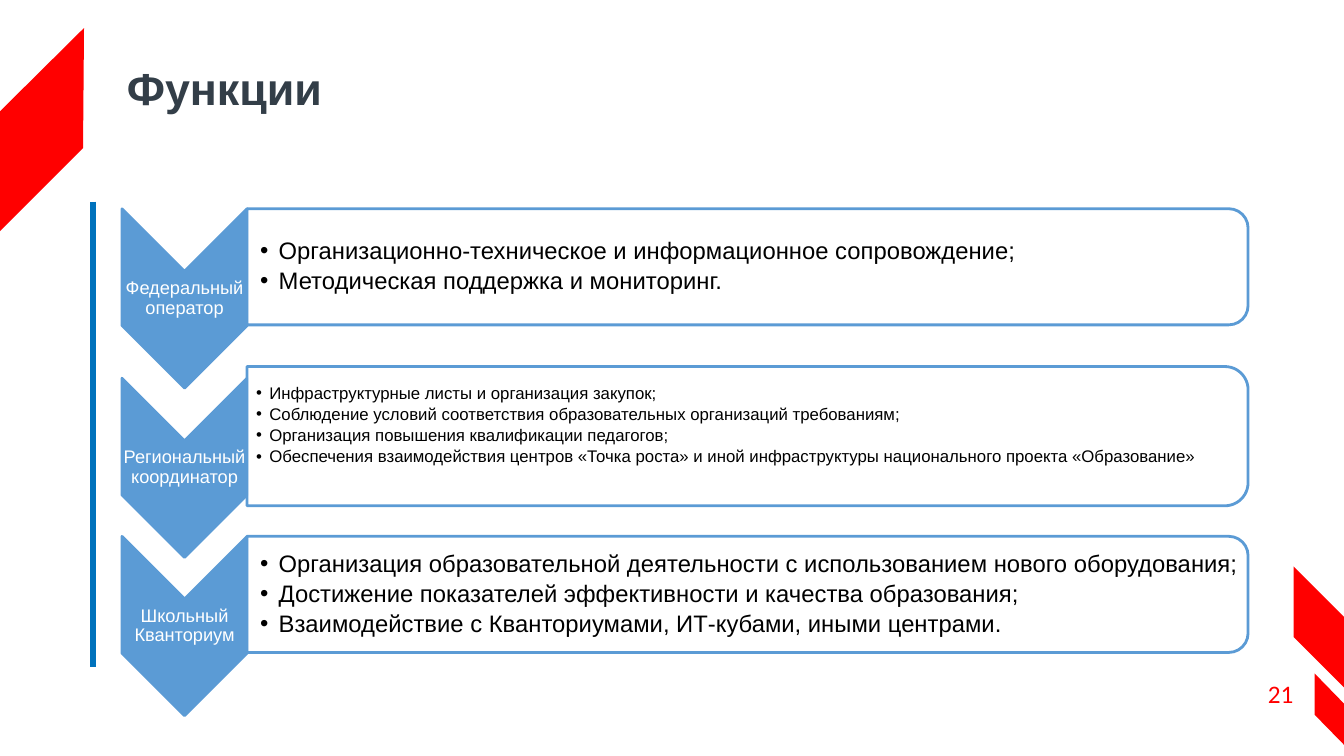
"""Builds the slide on the functions of the operator, coordinator and school."""
from dataclasses import dataclass

from lxml.etree import SubElement
from pptx import Presentation
from pptx.dml.color import RGBColor as Color
from pptx.enum.shapes import MSO_CONNECTOR as Connector, MSO_SHAPE as Shape
from pptx.enum.text import MSO_ANCHOR as Anchor, PP_ALIGN as Align
from pptx.oxml.ns import qn
from pptx.util import Pt


@dataclass(frozen=True)
class Theme:
    red: Color = Color(0xFF, 0x00, 0x00)
    ink: Color = Color(0x33, 0x3E, 0x48)
    bar: Color = Color(0x00, 0x72, 0xBC)
    blue: Color = Color(0x5B, 0x9B, 0xD5)
    white: Color = Color(0xFF, 0xFF, 0xFF)
    black: Color = Color(0x00, 0x00, 0x00)
    title: int = 32
    number: int = 18
    label: int = 13
    large: int = 17
    small: int = 12


theme = Theme()
deck = Presentation()
deck.slide_width, deck.slide_height = Pt(960), Pt(540)
page = deck.slides.add_slide(deck.slide_layouts[6])


def write(text, left, top, width, height, size, color, font="Arial", bold=False,
          align=Align.LEFT, anchor=Anchor.MIDDLE, insets=(3.6, 3.6, 3.6, 3.6),
          spacing=0.9, after=0, indent=0):
    box = page.shapes.add_textbox(Pt(left), Pt(top), Pt(width), Pt(height))
    frame = box.text_frame
    frame.word_wrap = True
    frame.vertical_anchor = anchor
    frame.margin_left, frame.margin_top, frame.margin_right, frame.margin_bottom = map(Pt, insets)
    for index, line in enumerate(text.split("\n")):
        para = frame.paragraphs[0] if index == 0 else frame.add_paragraph()
        if indent:
            props = para._p.get_or_add_pPr()
            props.set("marL", str(Pt(indent)))
            props.set("indent", str(-Pt(indent)))
            SubElement(props, qn("a:buFont")).set("typeface", "Arial")
            SubElement(props, qn("a:buChar")).set("char", "•")
        para.alignment = align
        para.line_spacing = spacing
        para.space_after = Pt(after)
        span = para.add_run()
        span.text = line
        span.font.name, span.font.size, span.font.bold = font, Pt(size), bold
        span.font.color.rgb = color


def add_turned(kind, center_x, center_y, width, height, fill):
    shape = page.shapes.add_shape(kind, Pt(center_x - width / 2), Pt(center_y - height / 2),
                                  Pt(width), Pt(height))
    shape.rotation = 90
    shape.shadow.inherit = False
    shape.fill.solid()
    shape.fill.fore_color.rgb = fill
    shape.line.color.rgb = theme.blue
    shape.line.width = Pt(2)
    return shape


write("21", 891.4, 481, 36, 28.8, theme.number, theme.red, font="Calibri",
      align=Align.RIGHT, anchor=Anchor.TOP, spacing=1)

ribbons = [
    [(0, 165), (0, 79.5), (60, 20), (59.3, 105.8)],
    [(960, 491), (924, 455), (924, 404.6), (960, 440.6)],
    [(960, 532), (939, 510.5), (939, 481), (960, 502.6)],
]
for corners in ribbons:
    start, *others = corners
    builder = page.shapes.build_freeform(Pt(start[0]), Pt(start[1]))
    builder.add_line_segments([(Pt(x), Pt(y)) for x, y in others], close=True)
    ribbon = builder.convert_to_shape()
    ribbon.shadow.inherit = False
    ribbon.fill.solid()
    ribbon.fill.fore_color.rgb = theme.red
    ribbon.line.fill.background()

write("Функции", 87, 28.8, 634, 72, theme.title, theme.ink, bold=True)

bar = page.shapes.add_connector(Connector.STRAIGHT, Pt(66.2), Pt(144), Pt(66.2), Pt(476.6))
bar.line.color.rgb = theme.bar
bar.line.width = Pt(4.5)
SubElement(bar._element.spPr, qn("a:effectLst"))

rows = [
    ("Федеральный оператор", 190.6, 83, theme.large, 0.72,
     "Организационно-техническое и информационное сопровождение;\n"
     "Методическая поддержка и мониторинг."),
    ("Региональный координатор", 311.6, 99.5, theme.small, 16,
     "Инфраструктурные листы и организация закупок;\n"
     "Соблюдение условий соответствия образовательных организаций требованиям;\n"
     "Организация повышения квалификации педагогов;\n"
     "Обеспечения взаимодействия центров «Точка роста» и иной инфраструктуры "
     "национального проекта «Образование»"),
    ("Школьный Кванториум", 424.6, 83, theme.large, 0.72,
     "Организация образовательной деятельности с использованием нового оборудования;\n"
     "Достижение показателей эффективности и качества образования;\n"
     "Взаимодействие с Кванториумами, ИТ-кубами, иными центрами."),
]
for label, middle, height, size, bottom, duties in rows:
    chevron_middle = middle + 22.6
    add_turned(Shape.CHEVRON, 131.8, chevron_middle, 128, 89.4, theme.blue)
    write(label, 87.1, chevron_middle - 19, 89.4, 38, theme.label, theme.white,
          align=Align.CENTER, insets=(0.72, 0.72, 0.72, 0.72))
    panel = add_turned(Shape.ROUND_2_SAME_RECTANGLE, 534, middle, height, 715, theme.white)
    tint = panel.fill._xPr.find(qn("a:solidFill"))[0]
    SubElement(tint, qn("a:alpha")).set("val", "90000")
    write(duties, 176.4, middle - height / 2 + 4, 711.4, height - 8, size, theme.black,
          insets=(size * 0.55, 0.72, 0.72, bottom), after=size * 0.18,
          indent=round(size * 0.78, 1))

deck.save("out.pptx")
